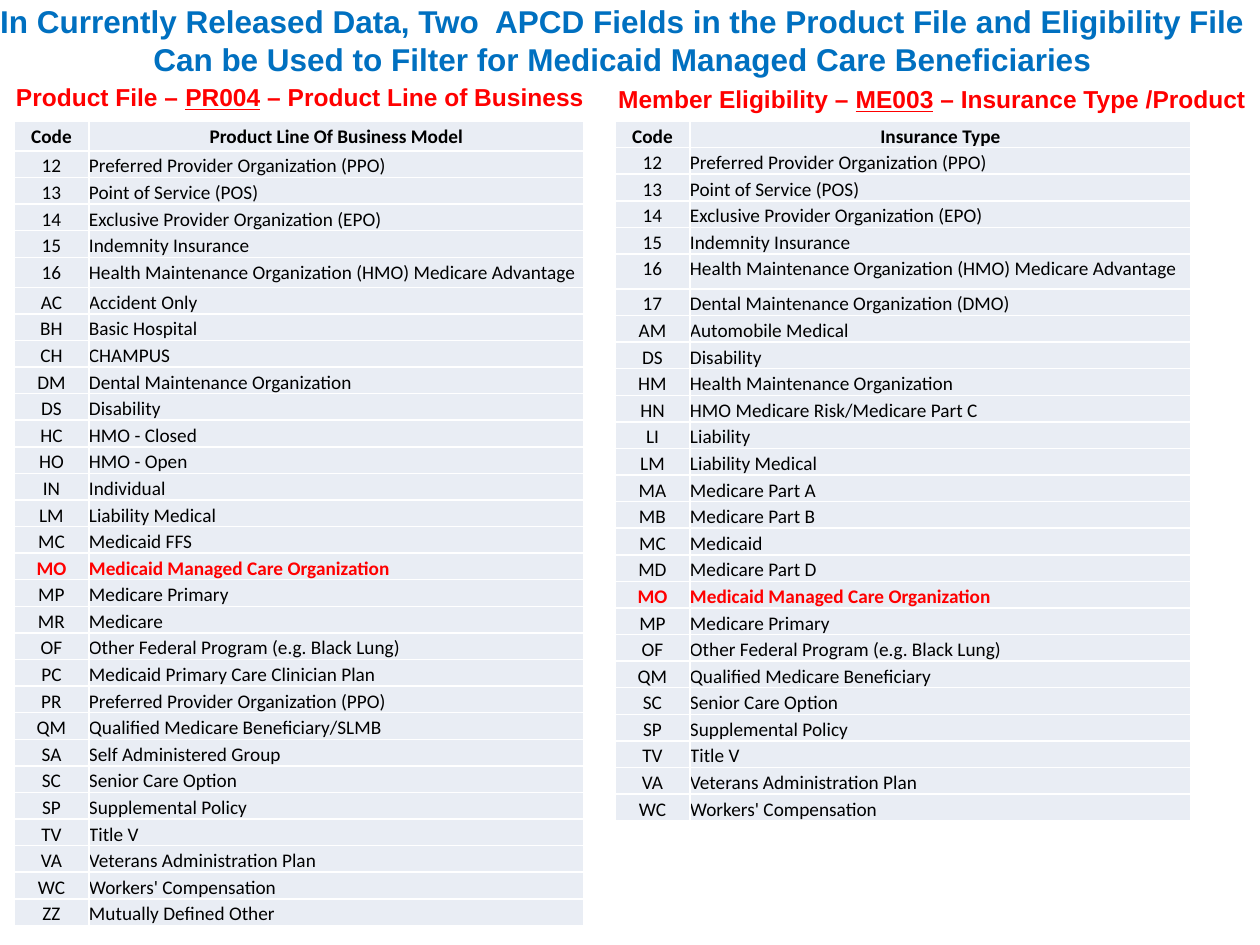
from lxml import etree
from pptx import Presentation, util as u
from pptx.dml.color import RGBColor
from pptx.enum import text as t
from pptx.oxml.ns import qn

SCALE = 914400 / 126
BLUE, RED, BLACK, WHITE, CELL_FILL = "0070C0", "FF0000", "000000", "FFFFFF", "E9EDF4"
CENTER, LEFT = t.PP_ALIGN.CENTER, t.PP_ALIGN.LEFT
HIGHLIGHT = "MO"

TITLE = (
    "In Currently Released Data, Two  APCD Fields in the Product File and Eligibility File "
    "Can be Used to Filter for Medicaid Managed Care Beneficiaries"
)

BUSINESS_LINES = [
    ("Code", "Product Line Of Business Model"),
    ("12", "Preferred Provider Organization (PPO)"),
    ("13", "Point of Service (POS)"),
    ("14", "Exclusive Provider Organization (EPO)"),
    ("15", "Indemnity Insurance"),
    ("16", "Health Maintenance Organization (HMO) Medicare Advantage"),
    ("AC", "Accident Only"),
    ("BH", "Basic Hospital"),
    ("CH", "CHAMPUS"),
    ("DM", "Dental Maintenance Organization"),
    ("DS", "Disability"),
    ("HC", "HMO - Closed"),
    ("HO", "HMO - Open"),
    ("IN", "Individual"),
    ("LM", "Liability Medical"),
    ("MC", "Medicaid FFS"),
    ("MO", "Medicaid Managed Care Organization"),
    ("MP", "Medicare Primary"),
    ("MR", "Medicare"),
    ("OF", "Other Federal Program (e.g. Black Lung)"),
    ("PC", "Medicaid Primary Care Clinician Plan"),
    ("PR", "Preferred Provider Organization (PPO)"),
    ("QM", "Qualified Medicare Beneficiary/SLMB"),
    ("SA", "Self Administered Group"),
    ("SC", "Senior Care Option"),
    ("SP", "Supplemental Policy"),
    ("TV", "Title V"),
    ("VA", "Veterans Administration Plan"),
    ("WC", "Workers' Compensation"),
    ("ZZ", "Mutually Defined Other"),
]

INSURANCE_TYPES = [
    ("Code", "Insurance Type"),
    ("12", "Preferred Provider Organization (PPO)"),
    ("13", "Point of Service (POS)"),
    ("14", "Exclusive Provider Organization (EPO)"),
    ("15", "Indemnity Insurance"),
    ("16", "Health Maintenance Organization (HMO) Medicare Advantage"),
    ("17", "Dental Maintenance Organization (DMO)"),
    ("AM", "Automobile Medical"),
    ("DS", "Disability"),
    ("HM", "Health Maintenance Organization"),
    ("HN", "HMO Medicare Risk/Medicare Part C"),
    ("LI", "Liability"),
    ("LM", "Liability Medical"),
    ("MA", "Medicare Part A"),
    ("MB", "Medicare Part B"),
    ("MC", "Medicaid"),
    ("MD", "Medicare Part D"),
    ("MO", "Medicaid Managed Care Organization"),
    ("MP", "Medicare Primary"),
    ("OF", "Other Federal Program (e.g. Black Lung)"),
    ("QM", "Qualified Medicare Beneficiary"),
    ("SC", "Senior Care Option"),
    ("SP", "Supplemental Policy"),
    ("TV", "Title V"),
    ("VA", "Veterans Administration Plan"),
    ("WC", "Workers' Compensation"),
]


def px(length):
    """Turn a length in px into EMU."""
    return u.Emu(round(length * SCALE))


def rgb(value):
    """Turn a hex string into a colour."""
    return RGBColor.from_string(value)


def write(frame, *parts, size=11, font="Calibri", color=BLACK, bold=False,
          align=CENTER, line=None, before=None, after=None, underlined=None):
    """Fill a text frame with one paragraph made of the given parts."""
    paragraph = frame.paragraphs[0]
    paragraph.alignment = align
    paragraph.line_spacing = line
    paragraph.space_before = before
    paragraph.space_after = after
    for part in parts:
        run = paragraph.add_run()
        run.text = part
        run.font.size, run.font.name = u.Pt(size), font
        run.font.bold = bold
        run.font.underline = True if part == underlined else None
        run.font.color.rgb = rgb(color)


def add_heading(slide, box, *parts, anchor=t.MSO_ANCHOR.TOP, **style):
    """Add a wrapped bold Arial text box."""
    frame = slide.shapes.add_textbox(*map(px, box)).text_frame
    frame.word_wrap = True
    frame.vertical_anchor = anchor
    write(frame, *parts, font="Arial", bold=True, **style)


def add_borders(cell):
    """Draw a thin white line on each side of a cell."""
    properties = cell._tc.get_or_add_tcPr()
    for side in ("a:lnL", "a:lnR", "a:lnT", "a:lnB"):
        border = etree.SubElement(properties, qn(side), w=str(u.Pt(1)))
        fill = etree.SubElement(border, qn("a:solidFill"))
        etree.SubElement(fill, qn("a:srgbClr"), val=WHITE)


def format_cell(cell, words, **style):
    """Give a cell its borders, fill, margins and text."""
    add_borders(cell)
    cell.fill.solid()
    cell.fill.fore_color.rgb = rgb(CELL_FILL)
    cell.margin_left = cell.margin_right = cell.margin_top = cell.margin_bottom = 0
    write(cell.text_frame, words, line=1.15, **style)


def add_code_table(slide, box, entries, row_height, tall_rows, after):
    """Add a two-column table of codes and their meanings."""
    holder = slide.shapes.add_table(len(entries), 2, *map(px, box))
    table = holder.table
    table.horz_banding = False
    code_width = 75
    table.columns[0].width = px(code_width)
    table.columns[1].width = px(box[2] - code_width)
    for index, (code, meaning) in enumerate(entries):
        table.rows[index].height = px(tall_rows.get(index, row_height))
        header, marked = index == 0, code == HIGHLIGHT
        style = {"bold": header or marked, "color": RED if marked else BLACK, "after": after}
        format_cell(table.cell(index, 0), code, **style)
        format_cell(table.cell(index, 1), meaning, align=CENTER if header else LEFT, **style)
    holder.height = px(box[3])


def main():
    """Build the slide and save it."""
    deck = Presentation()
    deck.slide_width, deck.slide_height = px(1260), px(945)
    slide = deck.slides.add_slide(deck.slide_layouts[6])
    field = {"size": 14, "color": RED, "before": u.Pt(1)}
    add_heading(slide, (-15, 76, 630, 52), "Product File – ", "PR004",
                " – Product Line of Business", underlined="PR004", **field)
    add_heading(slide, (-15, -4, 1275, 88), TITLE, size=18, color=BLUE,
                anchor=t.MSO_ANCHOR.MIDDLE)
    add_heading(slide, (568, 78, 728, 74), "Member Eligibility – ", "ME003",
                " – Insurance Type /Product", underlined="ME003", **field)
    add_code_table(slide, (14, 121, 570, 804), BUSINESS_LINES, 15,
                   {0: 30, 5: 30, 12: 23}, u.Pt(10))
    add_code_table(slide, (615, 121, 576, 699), INSURANCE_TYPES, 19, {5: 35}, u.Pt(0))
    deck.save("out.pptx")


if __name__ == "__main__":
    main()
